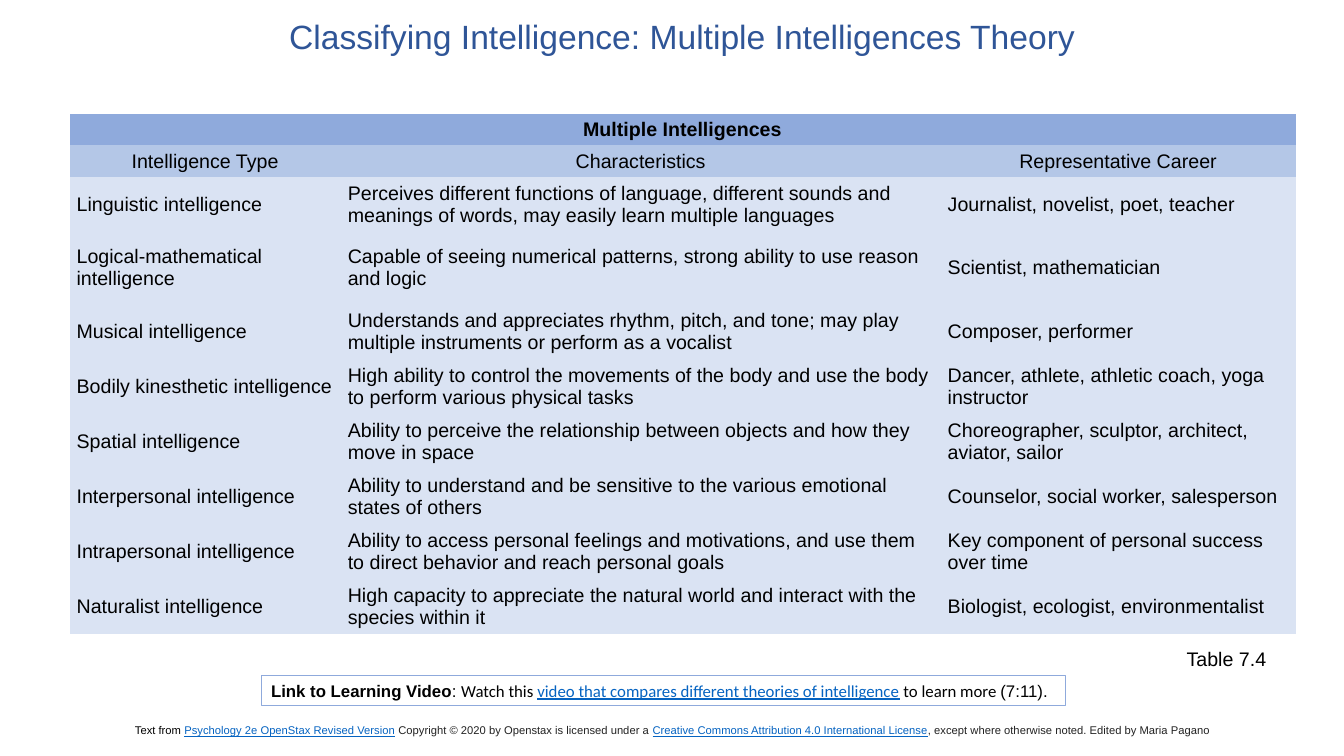
import pptx
import pptx.dml.color
import pptx.enum.text
import pptx.oxml.ns
import pptx.util

Inches = pptx.util.Inches
ALIGN = pptx.enum.text.PP_ALIGN
ANCHOR = pptx.enum.text.MSO_ANCHOR
AUTO_SIZE = pptx.enum.text.MSO_AUTO_SIZE
COLOURS = {
    "title": "2F5597", "text": "000000", "credit": "222222", "link": "0563C1",
    "banner": "8FAADC", "heading": "B4C7E7", "body": "DAE3F3",
}


def rgb(name):
    return pptx.dml.color.RGBColor.from_string(COLOURS[name])


def add_span(para, text, size, colour="text", face="Arial", bold=False):
    """Append one run; link-coloured runs are underlined."""
    span = para.add_run()
    span.text = text
    span.font.size = pptx.util.Pt(size)
    span.font.name = face
    span.font.bold = bold
    span.font.underline = colour == "link"
    span.font.color.rgb = rgb(colour)


deck = pptx.Presentation()
deck.slide_width, deck.slide_height = Inches(13.33), Inches(7.5)
page = deck.slides.add_slide(deck.slide_layouts[5])

# Title
title = page.shapes.title
title.left, title.top = Inches(1.36), Inches(0.15)
title.width, title.height = Inches(10.81), Inches(0.64)
title.text_frame.auto_size = AUTO_SIZE.NONE
title.text_frame.vertical_anchor = ANCHOR.TOP
para = title.text_frame.paragraphs[0]
para.alignment = ALIGN.CENTER
para.line_spacing = 0.9
add_span(para, "Classifying Intelligence: Multiple Intelligences Theory", 24, "title")

# Credit line
credit = page.shapes.add_textbox(Inches(1.24), Inches(7.13), Inches(11.04), Inches(0.37))
credit.text_frame.word_wrap = True
para = credit.text_frame.paragraphs[0]
for text, colour in [
    ("Text from ", "text"),
    ("Psychology 2e OpenStax Revised Version", "link"),
    (" Copyright © 2020 by Openstax is licensed under a ", "credit"),
    ("Creative Commons Attribution 4.0 International License", "link"),
    (", except where otherwise noted. Edited by Maria Pagano", "credit"),
]:
    add_span(para, text, 8, colour)

# Table of intelligences
rows = [
    ("Multiple Intelligences", "", ""),
    ("Intelligence Type", "Characteristics", "Representative Career"),
    ("Linguistic intelligence",
     "Perceives different functions of language, different sounds and meanings of words, "
     "may easily learn multiple languages",
     "Journalist, novelist, poet, teacher"),
    ("Logical-mathematical intelligence",
     "Capable of seeing numerical patterns, strong ability to use reason and logic",
     "Scientist, mathematician"),
    ("Musical intelligence",
     "Understands and appreciates rhythm, pitch, and tone; may play multiple instruments "
     "or perform as a vocalist",
     "Composer, performer"),
    ("Bodily kinesthetic intelligence",
     "High ability to control the movements of the body and use the body to perform "
     "various physical tasks",
     "Dancer, athlete, athletic coach, yoga instructor"),
    ("Spatial intelligence",
     "Ability to perceive the relationship between objects and how they move in space",
     "Choreographer, sculptor, architect, aviator, sailor"),
    ("Interpersonal intelligence",
     "Ability to understand and be sensitive to the various emotional states of others",
     "Counselor, social worker, salesperson"),
    ("Intrapersonal intelligence",
     "Ability to access personal feelings and motivations, and use them to direct "
     "behavior and reach personal goals",
     "Key component of personal success over time"),
    ("Naturalist intelligence",
     "High capacity to appreciate the natural world and interact with the species within it",
     "Biologist, ecologist, environmentalist"),
]
column_widths = [2.69, 5.95, 3.52]
row_heights = [0.3] * 2 + [0.53, 0.71] + [0.53] * 6
frame = page.shapes.add_table(len(rows), len(column_widths), Inches(0.69), Inches(1.13),
                              Inches(sum(column_widths)), Inches(sum(row_heights)))
table = frame.table
table.first_row = table.horz_banding = False
for style in frame.element.iter(pptx.oxml.ns.qn("a:tableStyleId")):
    style.text = "{2D5ABB26-0587-4C30-8999-92F81FD0307C}"  # no style, no grid
for column, width in zip(table.columns, column_widths):
    column.width = Inches(width)
table.cell(0, 0).merge(table.cell(0, 2))

for r, (texts, height) in enumerate(zip(rows, row_heights)):
    table.rows[r].height = Inches(height)
    fill = ["banner", "heading", "body"][min(r, 2)]
    for c, text in enumerate(texts):
        cell = table.cell(r, c)
        cell.fill.solid()
        cell.fill.fore_color.rgb = rgb(fill)
        cell.vertical_anchor = ANCHOR.MIDDLE
        cell.margin_left = cell.margin_right = Inches(0.07)
        cell.margin_top = cell.margin_bottom = Inches(0.04)
        if text:
            para = cell.text_frame.paragraphs[0]
            para.alignment = ALIGN.LEFT if fill == "body" else ALIGN.CENTER
            add_span(para, text, 14, bold=fill == "banner")

# Table number
label = page.shapes.add_textbox(Inches(11.67), Inches(6.37), Inches(1), Inches(0.34))
label.text_frame.word_wrap = False
add_span(label.text_frame.paragraphs[0], "Table 7.4", 14)

# Video link
video = page.shapes.add_textbox(Inches(2.59), Inches(6.7), Inches(7.98), Inches(0.3))
video.line.color.rgb = rgb("banner")
video.line.width = pptx.util.Pt(0.75)
video.text_frame.word_wrap = True
para = video.text_frame.paragraphs[0]
for text, colour, face, bold in [
    ("Link to Learning Video", "text", "Arial", True),
    (": ", "text", "Arial", False),
    ("Watch this ", "text", "Calibri", False),
    ("video that compares different theories of intelligence", "link", "Calibri", False),
    (" to learn more ", "text", "Calibri", False),
    ("(7:11).", "text", "Arial", False),
]:
    add_span(para, text, 12, colour, face, bold)

deck.save("out.pptx")
